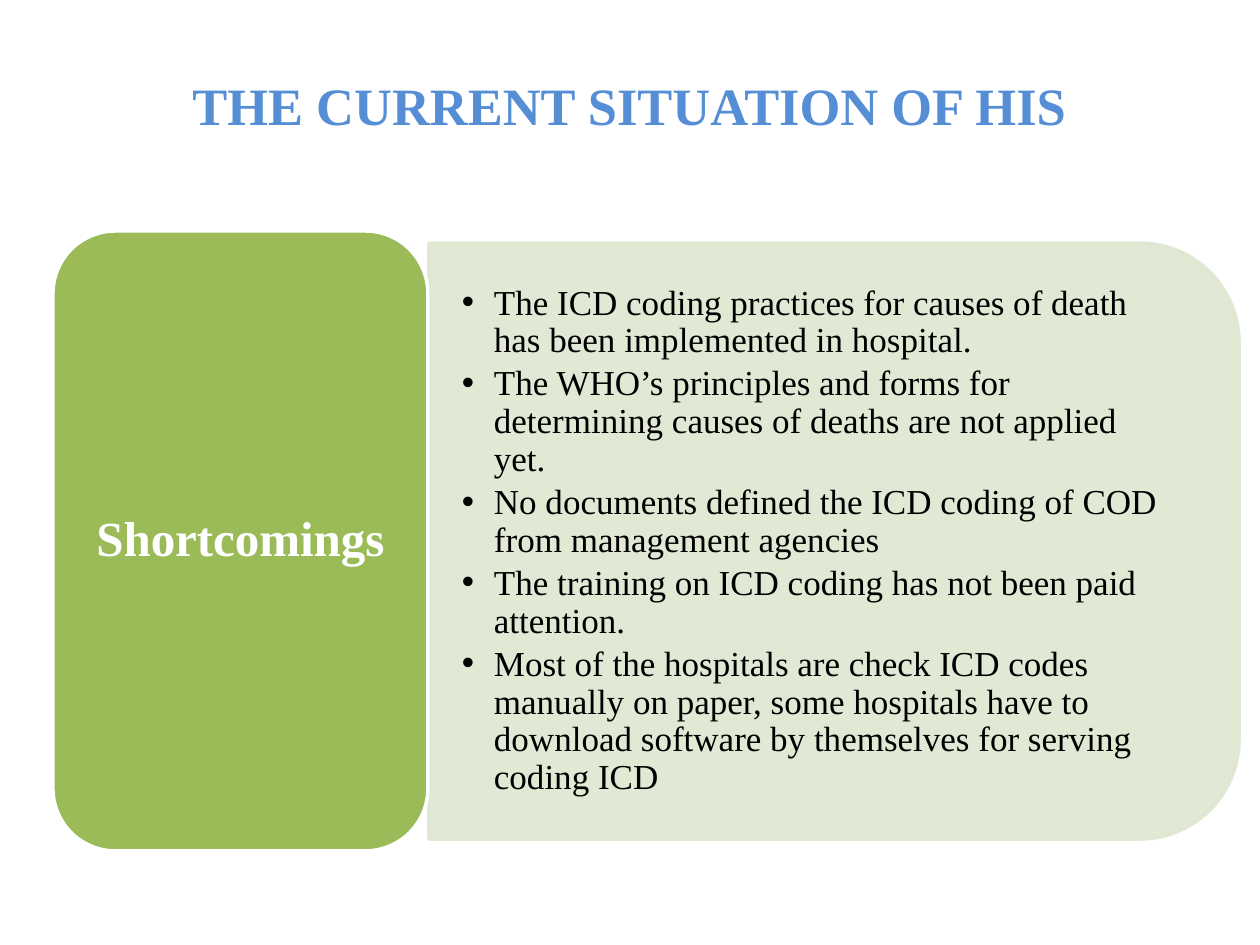
from dataclasses import dataclass
from lxml.etree import SubElement
from pptx import Presentation
from pptx.dml.color import RGBColor
from pptx.enum.shapes import MSO_SHAPE
from pptx.enum.text import MSO_ANCHOR, MSO_AUTO_SIZE, PP_ALIGN
from pptx.oxml.ns import qn
from pptx.util import Emu, Pt

POINTS = [
    "The ICD coding practices for causes of death has been implemented in hospital.",
    "The WHO’s principles and forms for determining causes of deaths are not applied yet.",
    "No documents defined the ICD coding of COD from management agencies",
    "The training on ICD coding has not been paid attention.",
    "Most of the hospitals are check ICD codes manually on paper, some hospitals have to "
    "download software by themselves for serving coding ICD",
]


@dataclass(frozen=True)
class Theme:
    font: str = "Times New Roman"
    blue: str = "558ED5"
    green: str = "9BBB59"
    pale: str = "DEE7D1"
    white: str = "FFFFFF"
    black: str = "000000"
    head: int = 30
    label: int = 28
    body: int = 20
    edge: int = 2
    alpha: int = 90


def px(n):
    return Emu(round(n * 914400 / 126))


class Deck:
    """Holds the theme and the current slide, and draws each kind of element."""

    def __init__(self, theme):
        self.theme = theme
        self.file = Presentation()
        self.file.slide_width, self.file.slide_height = px(1260), px(945)
        self.slide = self.file.slides.add_slide(self.file.slide_layouts[5])

    def place(self, item, box):
        item.left, item.top, item.width, item.height = map(px, box)

    def words(self, frame, lines, size, color, bold=False, align=PP_ALIGN.CENTER,
              gap=0.9, pad=(13, 6)):
        frame.text = "\n".join(lines)
        frame.word_wrap = True
        frame.auto_size = MSO_AUTO_SIZE.NONE
        frame.vertical_anchor = MSO_ANCHOR.MIDDLE
        frame.margin_left = frame.margin_right = px(pad[0])
        frame.margin_top = frame.margin_bottom = px(pad[1])
        for para in frame.paragraphs:
            para.alignment = align
            para.line_spacing = gap
            for run in para.runs:
                font = run.font
                font.name, font.size, font.bold = self.theme.font, Pt(size), bold
                font.color.rgb = RGBColor.from_string(color)

    def title(self, text, box):
        item = self.slide.shapes.title
        self.place(item, box)
        self.words(item.text_frame, [text], self.theme.head, self.theme.blue, True, gap=0.8)

    def shape(self, kind, box, fill, line, turn=0, alpha=100):
        item = self.slide.shapes.add_shape(kind, *map(px, box))
        item.shadow.inherit = False
        item.rotation = turn
        item.line.width = Pt(self.theme.edge)
        for paint, color in ((item.fill, fill), (item.line.fill, line)):
            paint.solid()
            paint.fore_color.rgb = RGBColor.from_string(color)
        if alpha < 100:
            for tone in item.element.spPr.iter(qn("a:srgbClr")):
                SubElement(tone, qn("a:alpha"), val=str(alpha * 1000))
        return item

    def label(self, text, box):
        item = self.shape(MSO_SHAPE.ROUNDED_RECTANGLE, box, self.theme.green, self.theme.white)
        self.words(item.text_frame, [text], self.theme.label, self.theme.white, True)

    def panel(self, box):
        self.shape(MSO_SHAPE.ROUND_2_SAME_RECTANGLE, box, self.theme.pale, self.theme.pale,
                   90, self.theme.alpha)

    def bullets(self, lines, box):
        frame = self.slide.shapes.add_textbox(*map(px, box)).text_frame
        self.words(frame, lines, self.theme.body, self.theme.black,
                   align=PP_ALIGN.LEFT, pad=(34, 17))
        for para in frame.paragraphs:
            para.space_after = Pt(3)
            props = para._p.get_or_add_pPr()
            props.set("marL", str(px(32)))
            props.set("indent", str(-px(32)))
            SubElement(props, qn("a:buFont"), typeface="Arial")
            SubElement(props, qn("a:buChar"), char="•")


def main():
    deck = Deck(Theme())
    deck.panel((536, 136, 596, 810))
    deck.bullets(POINTS, (428, 272, 781, 538))
    deck.label("Shortcomings", (53, 231, 375, 620))
    deck.title("THE CURRENT SITUATION OF HIS", (73, 42, 1113, 136))
    deck.file.save("out.pptx")


if __name__ == "__main__":
    main()
